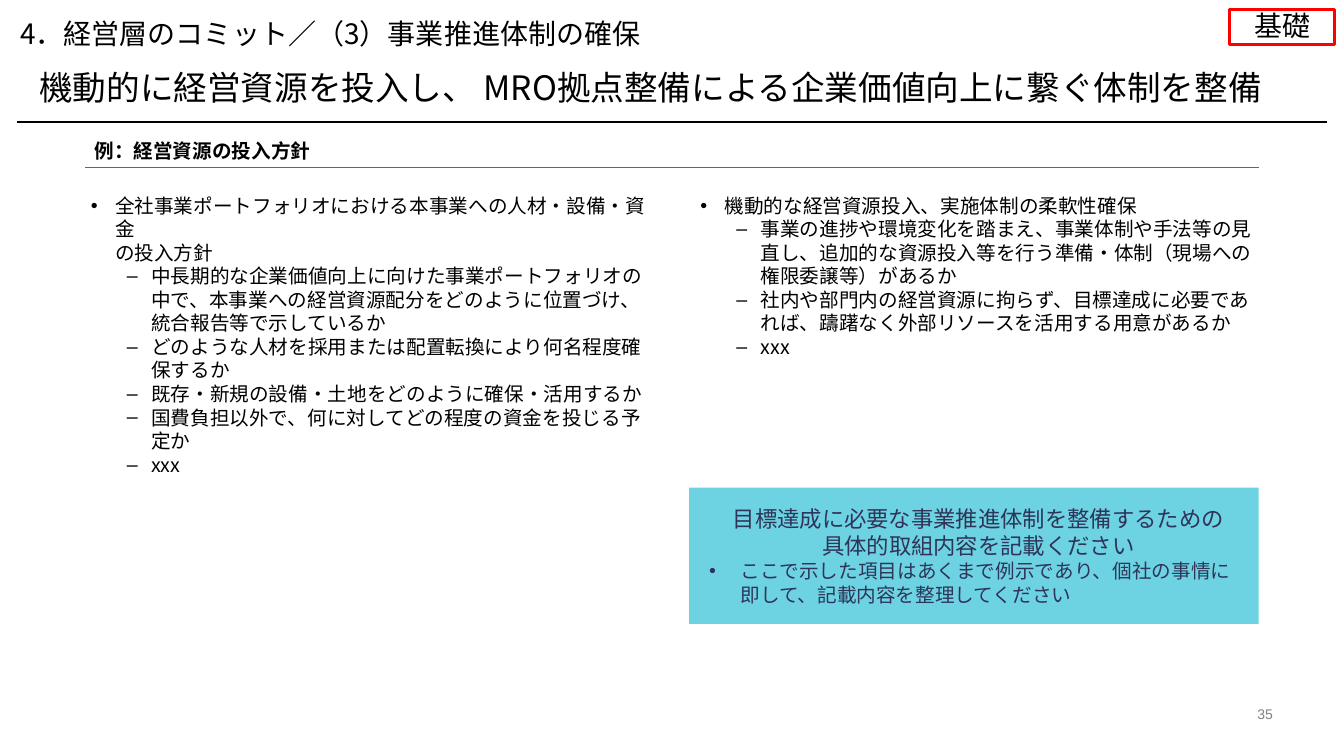
from dataclasses import dataclass

from lxml import etree
from pptx import Presentation
from pptx.dml.color import RGBColor
from pptx.enum.shapes import MSO_CONNECTOR, MSO_SHAPE
from pptx.enum.text import MSO_ANCHOR, MSO_AUTO_SIZE, PP_ALIGN
from pptx.oxml.ns import qn
from pptx.util import Cm, Pt

LEFT, CENTER, RIGHT = PP_ALIGN.LEFT, PP_ALIGN.CENTER, PP_ALIGN.RIGHT
TOP, MIDDLE, BOTTOM = MSO_ANCHOR.TOP, MSO_ANCHOR.MIDDLE, MSO_ANCHOR.BOTTOM
RECTANGLE, STRAIGHT = MSO_SHAPE.RECTANGLE, MSO_CONNECTOR.STRAIGHT
NO_AUTOFIT = MSO_AUTO_SIZE.NONE

BLACK = RGBColor(0x00, 0x00, 0x00)
WHITE = RGBColor(0xFF, 0xFF, 0xFF)
RED = RGBColor(0xFF, 0x00, 0x00)
GRAY = RGBColor(0x80, 0x80, 0x80)
RULE_GRAY = RGBColor(0x66, 0x66, 0x66)
CYAN = RGBColor(0x30, 0xC1, 0xD7)
NAVY = RGBColor(0x2E, 0x35, 0x58)

GOTHIC, ARIAL = "Noto Sans CJK JP", "Arial"
NORMAL_LEADING, TIGHT_LEADING = 1.2, 1.08  # line pitch per point of text size


@dataclass(frozen=True)
class Box:
    left: float
    top: float
    width: float
    height: float

    def lengths(self) -> tuple:
        return Cm(self.left), Cm(self.top), Cm(self.width), Cm(self.height)


@dataclass(frozen=True)
class Para:
    text: str
    size: float = 14
    font: str = GOTHIC
    color: RGBColor = BLACK
    bold: bool = False
    align: PP_ALIGN = LEFT
    leading: float = NORMAL_LEADING
    level: int = 0
    margin: float = 0
    indent: float = 0
    bullet: str = ""


@dataclass(frozen=True)
class Rule:
    left: float
    right: float
    y: float
    color: RGBColor
    weight: float


def topic(text: str) -> Para:
    return Para(text, level=1, margin=0.89, indent=-0.61, bullet="•")


def point(text: str) -> Para:
    return Para(text, level=2, margin=1.8, indent=-0.61, bullet="–")


def write_text(shape, paras: list[Para], anchor: MSO_ANCHOR = TOP,
               inset: tuple[float, float] = (0, 0)) -> None:
    frame = shape.text_frame
    side, edge = (Cm(value) for value in inset)
    layout = {"word_wrap": True, "auto_size": NO_AUTOFIT, "vertical_anchor": anchor,
              "margin_left": side, "margin_right": side,
              "margin_top": edge, "margin_bottom": edge}
    for name, value in layout.items():
        setattr(frame, name, value)
    for index, para in enumerate(paras):
        paragraph = frame.add_paragraph() if index else frame.paragraphs[0]
        paragraph.text = para.text
        spacing = {"alignment": para.align, "level": para.level,
                   "line_spacing": Pt(round(para.size * para.leading, 2)),
                   "space_before": Pt(0), "space_after": Pt(0)}
        for name, value in spacing.items():
            setattr(paragraph, name, value)
        properties = paragraph._p.get_or_add_pPr()
        properties.set("marL", str(Cm(para.margin)))
        properties.set("indent", str(Cm(para.indent)))
        if para.bullet:
            bullet_color = etree.SubElement(properties, qn("a:buClr"))
            etree.SubElement(bullet_color, qn("a:srgbClr"), val=str(para.color))
            etree.SubElement(properties, qn("a:buFont"), typeface=ARIAL)
            etree.SubElement(properties, qn("a:buChar"), char=para.bullet)
        else:
            etree.SubElement(properties, qn("a:buNone"))
        for run in paragraph.runs:
            run.font.color.rgb = para.color
            face = {"name": para.font, "size": Pt(para.size), "bold": para.bold}
            for name, value in face.items():
                setattr(run.font, name, value)
            etree.SubElement(run._r.get_or_add_rPr(), qn("a:ea"), typeface=GOTHIC)


def add_text(slide, box: Box, paras: list[Para], anchor: MSO_ANCHOR = TOP) -> None:
    write_text(slide.shapes.add_textbox(*box.lengths()), paras, anchor)


def add_panel(slide, box: Box, paras: list[Para], fill: RGBColor | None = None,
              line: RGBColor | None = None, opacity: int = 100,
              inset: tuple[float, float] = (0.25, 0.13)) -> None:
    panel = slide.shapes.add_shape(RECTANGLE, *box.lengths())
    panel.shadow.inherit = False
    if fill is None:
        panel.fill.background()
    else:
        panel.fill.solid()
        panel.fill.fore_color.rgb = fill
        if opacity < 100:
            fill_color = panel._element.spPr.find(qn("a:solidFill"))[0]
            etree.SubElement(fill_color, qn("a:alpha"), val=str(opacity * 1000))
    if line is None:
        panel.line.fill.background()
    else:
        panel.line.color.rgb = line
        panel.line.width = Pt(2.25)
    write_text(panel, paras, MIDDLE, inset)


def add_rule(slide, rule: Rule) -> None:
    connector = slide.shapes.add_connector(
        STRAIGHT, Cm(rule.left), Cm(rule.y), Cm(rule.right), Cm(rule.y))
    connector.line.color.rgb = rule.color
    connector.line.width = Pt(rule.weight)
    etree.SubElement(connector._element.spPr, qn("a:effectLst"))


TITLE = Para("機動的に経営資源を投入し、 MRO拠点整備による企業価値向上に繋ぐ体制を整備",
             size=24, leading=TIGHT_LEADING)
CHAPTER = Para("4．経営層のコミット／（3）事業推進体制の確保", size=20, leading=TIGHT_LEADING)
TAG = Para("基礎", size=20, align=CENTER, leading=TIGHT_LEADING)
HEADING = Para("例：経営資源の投入方針", bold=True)
PAGE_NUMBER = Para("35", size=10, font=ARIAL, color=GRAY, align=RIGHT)

COLUMNS = {
    2.01: [
        topic("全社事業ポートフォリオにおける本事業への人材・設備・資金\vの投入方針"),
        point("中長期的な企業価値向上に向けた事業ポートフォリオの中で、本事業への経営資源配分を"
              "どのように位置づけ、統合報告等で示しているか"),
        point("どのような人材を採用または配置転換により何名程度確保するか"),
        point("既存・新規の設備・土地をどのように確保・活用するか"),
        point("国費負担以外で、何に対してどの程度の資金を投じる予定か"),
        point("xxx"),
    ],
    17.37: [
        topic("機動的な経営資源投入、実施体制の柔軟性確保"),
        point("事業の進捗や環境変化を踏まえ、事業体制や手法等の見直し、追加的な資源投入等を行う"
              "準備・体制（現場への権限委譲等）があるか"),
        point("社内や部門内の経営資源に拘らず、目標達成に必要であれば、躊躇なく外部リソースを"
              "活用する用意があるか"),
        point("xxx"),
    ],
}
GUIDANCE = [
    Para("目標達成に必要な事業推進体制を整備するための\v具体的取組内容を記載ください",
         size=16, font=ARIAL, color=NAVY, align=CENTER, margin=0.23),
    Para("ここで示した項目はあくまで例示であり、個社の事情に即して、記載内容を整理してください",
         color=NAVY, margin=1.04, indent=-0.79, bullet="•"),
]
RULES = [Rule(2.13, 31.72, 4.22, RULE_GRAY, 0.75), Rule(0.43, 33.43, 3.07, BLACK, 1)]


def main() -> None:
    deck = Presentation()
    deck.slide_width, deck.slide_height = Cm(33.87), Cm(19.05)
    slide = deck.slides.add_slide(deck.slide_layouts[5])

    # Title, chapter and tag
    title = slide.shapes.title
    title.left, title.top, title.width, title.height = Box(0.99, 1.8, 31.6, 0.91).lengths()
    write_text(title, [TITLE])
    add_text(slide, Box(0.51, 0.51, 30, 0.76), [CHAPTER])
    add_panel(slide, Box(30.99, 0.23, 2.64, 0.89), [TAG], line=RED, inset=(0, 0))

    # Two columns of policy points
    for left, paras in COLUMNS.items():
        add_text(slide, Box(left, 4.88, 14.5, 12.7), paras)

    # Guidance panel
    add_panel(slide, Box(17.37, 12.29, 14.35, 3.43), GUIDANCE, fill=CYAN, opacity=70)

    # Section heading, rules and page number
    add_panel(slide, Box(2.13, 3.4, 29.62, 0.79), [HEADING], fill=WHITE)
    for rule in RULES:
        add_rule(slide, rule)
    add_text(slide, Box(31.01, 17.78, 1.07, 0.43), [PAGE_NUMBER], BOTTOM)

    deck.save("out.pptx")


if __name__ == "__main__":
    main()
